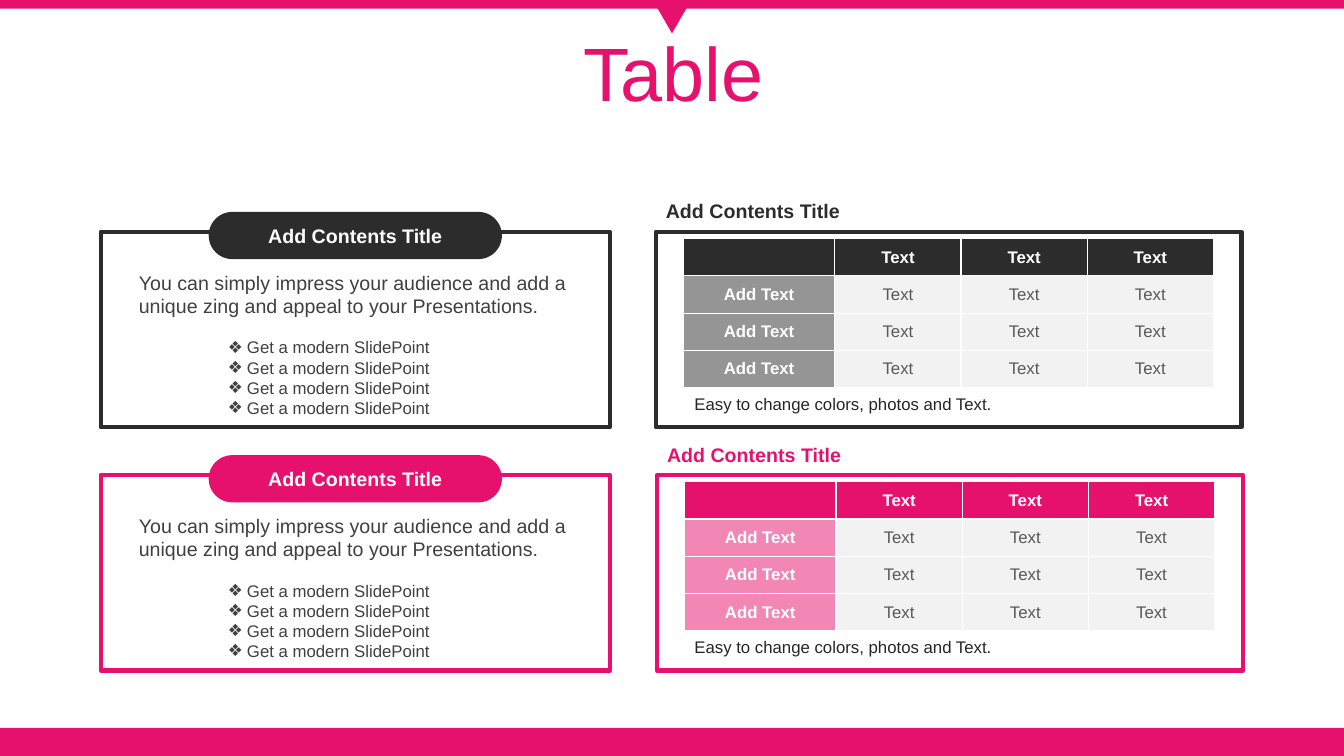
import pptx
import pptx.dml.color
import pptx.enum.shapes
import pptx.enum.text
import pptx.oxml
import pptx.oxml.ns
import pptx.util
from pptx.util import Cm

COLOURS = {
    "pink": "E6106D",
    "dark": "2C2C2C",
    "white": "FFFFFF",
    "cell": "F2F2F2",
    "cell text": "595959",
    "body text": "404040",
    "caption": "262626",
}
FONT = "Arial"
HEADING = "Add Contents Title"
DESCRIPTION = ("You can simply impress your audience and add a unique zing "
               "and appeal to your Presentations.")
LIST_ITEMS = ["Get a modern SlidePoint"] * 4
CAPTION = "Easy to change colors, photos and Text."
TABLE_ROWS = [["", "Text", "Text", "Text"]] + [["Add Text", "Text", "Text", "Text"]] * 3
COLUMN_WIDTHS = [3.82, 3.18, 3.18, 3.18]
ROW_HEIGHT = 0.94

SHAPES = pptx.enum.shapes.MSO_SHAPE
ALIGN = pptx.enum.text.PP_ALIGN
ANCHOR = pptx.enum.text.MSO_ANCHOR


def rgb(colour):
    return pptx.dml.color.RGBColor.from_string(COLOURS[colour])


def format_paragraph(paragraph, size, colour, bold=False, align=ALIGN.LEFT):
    paragraph.alignment = align
    paragraph.font.name = FONT
    paragraph.font.size = pptx.util.Pt(size)
    paragraph.font.bold = bold
    paragraph.font.color.rgb = rgb(colour)


def add_block(slide, kind, left, top, width, height, fill, outline=None):
    block = slide.shapes.add_shape(kind, Cm(left), Cm(top), Cm(width), Cm(height))
    block.shadow.inherit = False
    block.fill.solid()
    block.fill.fore_color.rgb = rgb(fill)
    if outline:
        block.line.color.rgb = rgb(outline)
        block.line.width = pptx.util.Pt(3)
    else:
        block.line.fill.background()
    return block


def add_text(slide, text, left, top, width, height, size, colour, bold=False):
    box = slide.shapes.add_textbox(Cm(left), Cm(top), Cm(width), Cm(height))
    box.text_frame.word_wrap = True
    box.text_frame.text = text
    format_paragraph(box.text_frame.paragraphs[0], size, colour, bold)


def add_pill(slide, top, colour):
    pill = add_block(slide, SHAPES.ROUNDED_RECTANGLE, 5.26, top, 7.39, 1.19, colour)
    pill.adjustments[0] = 0.5
    pill.text_frame.text = HEADING
    pill.text_frame.vertical_anchor = ANCHOR.MIDDLE
    format_paragraph(pill.text_frame.paragraphs[0], 14, "white", True, ALIGN.CENTER)


def place_placeholder(placeholder, left, top, width, height, anchor):
    """Move a placeholder and bring it to the front."""
    placeholder.left, placeholder.top = Cm(left), Cm(top)
    placeholder.width, placeholder.height = Cm(width), Cm(height)
    frame = placeholder.text_frame
    frame.auto_size = pptx.enum.text.MSO_AUTO_SIZE.NONE
    frame.vertical_anchor = anchor
    placeholder.element.getparent().append(placeholder.element)
    return frame


def fill_title(placeholder):
    frame = place_placeholder(placeholder, 0.89, 0.94, 32.16, 2.01, ANCHOR.MIDDLE)
    frame.text = "Table"
    frame.paragraphs[0].line_spacing = 0.9
    format_paragraph(frame.paragraphs[0], 54, "pink", align=ALIGN.CENTER)


def fill_list(placeholder, top):
    frame = place_placeholder(placeholder, 5.49, top, 6.99, 2.31, ANCHOR.TOP)
    frame.text = "\n".join(LIST_ITEMS)
    for paragraph in frame.paragraphs:
        paragraph.space_before = pptx.util.Pt(0)
        format_paragraph(paragraph, 12, "body text")
        properties = paragraph.font._element.getparent()
        properties.set("marL", str(Cm(0.48)))
        properties.set("indent", str(-Cm(0.48)))
        bullet = pptx.oxml.parse_xml(
            f'<a:buChar {pptx.oxml.ns.nsdecls("a")} char="❖"/>')
        properties.find(pptx.oxml.ns.qn("a:defRPr")).addprevious(bullet)


def add_cell_borders(frame):
    for properties in frame.element.iter(pptx.oxml.ns.qn("a:tcPr")):
        for index, side in enumerate("LRTB"):
            properties.insert(index, pptx.oxml.parse_xml(
                f'<a:ln{side} {pptx.oxml.ns.nsdecls("a")} w="12700"><a:solidFill>'
                f'<a:srgbClr val="{COLOURS["white"]}"/></a:solidFill></a:ln{side}>'))


def make_row_headers_translucent(frame):
    rows = list(frame.element.iter(pptx.oxml.ns.qn("a:tr")))
    for row in rows[1:]:
        properties = next(row.iter(pptx.oxml.ns.qn("a:tcPr")))
        colour = next(properties.iter(pptx.oxml.ns.qn("a:srgbClr")))
        colour.append(pptx.oxml.parse_xml(
            f'<a:alpha {pptx.oxml.ns.nsdecls("a")} val="50000"/>'))


def add_table(slide, left, top, colour):
    frame = slide.shapes.add_table(
        len(TABLE_ROWS), len(COLUMN_WIDTHS), Cm(left), Cm(top),
        Cm(sum(COLUMN_WIDTHS)), Cm(ROW_HEIGHT * len(TABLE_ROWS)))
    table = frame.table
    for column, width in zip(table.columns, COLUMN_WIDTHS):
        column.width = Cm(width)
    for row_index, texts in enumerate(TABLE_ROWS):
        table.rows[row_index].height = Cm(ROW_HEIGHT)
        for column_index, text in enumerate(texts):
            header = row_index == 0 or column_index == 0
            cell = table.cell(row_index, column_index)
            cell.text = text
            cell.vertical_anchor = ANCHOR.MIDDLE
            cell.margin_top = cell.margin_bottom = 0
            cell.fill.solid()
            cell.fill.fore_color.rgb = rgb(colour if header else "cell")
            format_paragraph(cell.text_frame.paragraphs[0], 12,
                             "white" if header else "cell text", header, ALIGN.CENTER)
    make_row_headers_translucent(frame)
    add_cell_borders(frame)


def add_list_panel(slide, placeholder, top, colour):
    add_block(slide, SHAPES.RECTANGLE, 2.54, top, 12.83, 4.93, "white", colour)
    add_pill(slide, top - 0.5, colour)
    add_text(slide, DESCRIPTION, 3.25, top + 0.85, 11.43, 1.45, 14, "body text")
    fill_list(placeholder, top + 2.53)


def add_table_panel(slide, left, top, colour):
    add_text(slide, HEADING, left, top - 0.94, 6.99, 0.86, 14, colour, True)
    add_block(slide, SHAPES.RECTANGLE, left, top, 14.76, 4.93, "white", colour)
    add_table(slide, left + 0.69, top + 0.17, colour)
    add_text(slide, CAPTION, 17.25, top + 3.96, 10.74, 0.76, 12, "caption")


def main():
    presentation = pptx.Presentation()
    presentation.slide_width, presentation.slide_height = Cm(33.87), Cm(19.05)
    slide = presentation.slides.add_slide(
        presentation.slide_layouts.get_by_name("Two Content"))
    title, *lists = list(slide.placeholders)

    add_block(slide, SHAPES.RECTANGLE, 0, 18.34, 33.87, 0.71, "pink")
    add_block(slide, SHAPES.RECTANGLE, 0, 0, 33.87, 0.22, "pink")
    pointer = add_block(slide, SHAPES.ISOSCELES_TRIANGLE, 16.45, 0, 0.97, 0.84, "pink")
    pointer.rotation = 180
    fill_title(title)

    panels = [("dark", 5.84, 16.53), ("pink", 11.97, 16.56)]
    for placeholder, (colour, top, table_left) in zip(lists, panels):
        add_list_panel(slide, placeholder, top, colour)
        add_table_panel(slide, table_left, top, colour)
    presentation.save("out.pptx")


if __name__ == "__main__":
    main()
